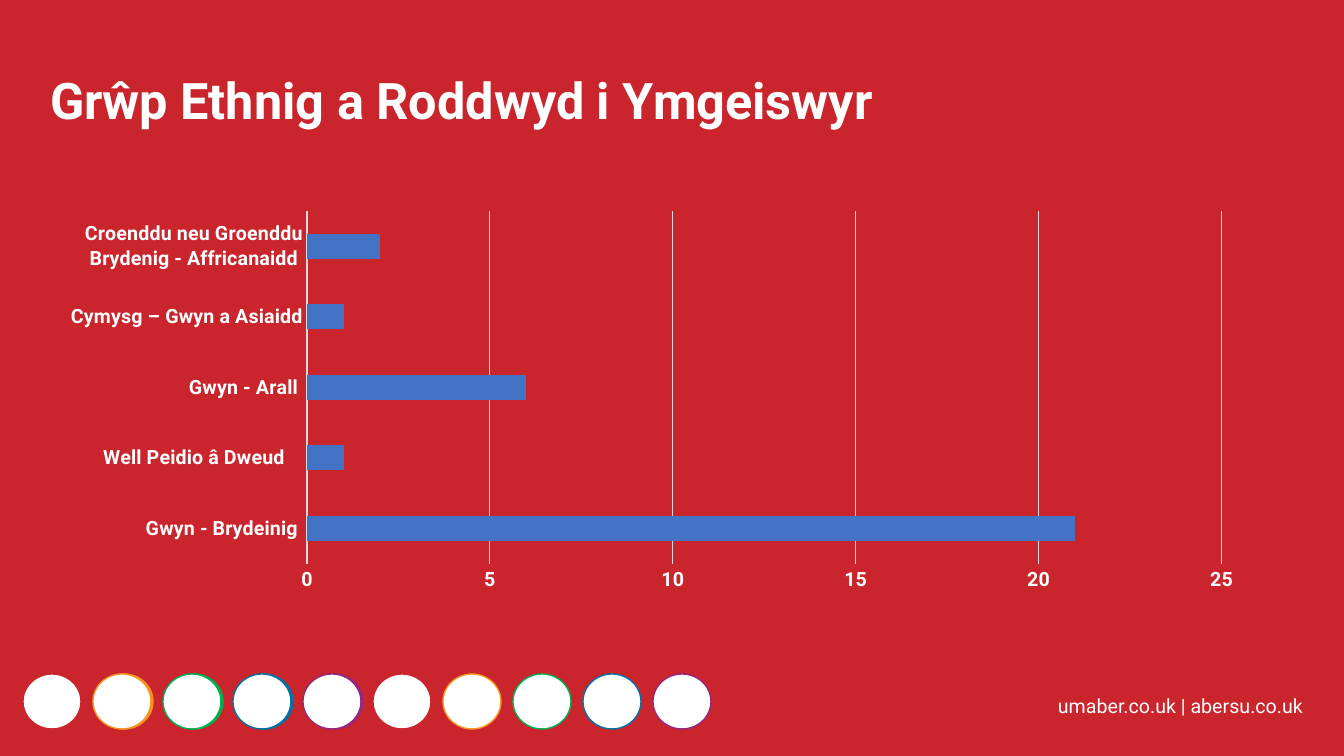
from pptx import Presentation
from pptx.chart.data import CategoryChartData
from pptx.dml.color import RGBColor
from pptx.enum.chart import XL_CHART_TYPE, XL_TICK_MARK
from pptx.enum.shapes import MSO_SHAPE
from pptx.enum.text import MSO_ANCHOR, MSO_AUTO_SIZE, PP_ALIGN
from pptx.util import Pt

BAR_CLUSTERED = XL_CHART_TYPE.BAR_CLUSTERED
NO_TICK = XL_TICK_MARK.NONE
OVAL = MSO_SHAPE.OVAL
TOP = MSO_ANCHOR.TOP
NO_AUTOFIT = MSO_AUTO_SIZE.NONE
LEFT = PP_ALIGN.LEFT

EMU_PER_PX = 914400 / 100.8
FONT = "Roboto"
COLORS = {
    "red": "CA252C",
    "orange": "F7941F",
    "green": "00AF50",
    "blue": "0171A3",
    "purple": "95277D",
    "white": "FFFFFF",
    "grid": "D9D9D9",
    "bar": "4472C4",
}
RING_COLORS = ["red", "orange", "green", "blue", "purple"]
RING_STEP = 70
GROUPS = {
    "Gwyn - Brydeinig ": 21,
    "Well Peidio â Dweud\t": 1,
    "Gwyn - Arall ": 6,
    "Cymysg – Gwyn a Asiaidd": 1,
    "Croenddu neu Groenddu Brydenig - Affricanaidd": 2,
}


def px(*lengths):
    return [round(length * EMU_PER_PX) for length in lengths]


def color(name):
    return RGBColor.from_string(COLORS[name])


def set_font(font, size, bold):
    font.name = FONT
    font.size = Pt(size)
    font.bold = bold
    font.color.rgb = color("white")


def set_line(line, name, width):
    line.color.rgb = color(name)
    line.width = Pt(width)


def write_text(frame, text, size, bold=False):
    frame.word_wrap = True
    frame.auto_size = NO_AUTOFIT
    frame.vertical_anchor = TOP
    para = frame.paragraphs[0]
    para.text = text
    para.alignment = LEFT
    set_font(para.font, size, bold)
    return para


def add_title(page, text):
    title = page.shapes.title
    title.left, title.top, title.width, title.height = px(40, 71, 1151, 88)
    para = write_text(title.text_frame, text, 36, bold=True)
    para.line_spacing = 0.9


def add_circle(page, left, fill, ring):
    circle = page.shapes.add_shape(OVAL, *px(left, 674, 58, 55))
    circle.shadow.inherit = False
    circle.fill.solid()
    circle.fill.fore_color.rgb = color(fill)
    set_line(circle.line, ring, 1)


def add_circle_row(page):
    """Draw ten white rings, the first five over a coloured disc set slightly right."""
    for index, ring in enumerate(RING_COLORS):
        add_circle(page, 25 + index * RING_STEP, ring, ring)
    for index, ring in enumerate(RING_COLORS * 2):
        add_circle(page, 23 + index * RING_STEP, "white", ring)


def add_footer(page, text):
    box = page.shapes.add_textbox(*px(1048, 689, 282, 34))
    write_text(box.text_frame, text, 14)


def add_group_chart(page):
    data = CategoryChartData()
    data.categories = list(GROUPS)
    data.add_series("Series 1", list(GROUPS.values()))
    frame = page.shapes.add_chart(BAR_CLUSTERED, *px(61, 203, 1196, 397), data)
    chart = frame.chart
    chart.has_legend = False
    chart.has_title = False
    set_font(chart.font, 14, True)

    plot = chart.plots[0]
    plot.gap_width = 182
    plot.vary_by_categories = False
    fill = plot.series[0].format.fill
    fill.solid()
    fill.fore_color.rgb = color("bar")

    for axis in (chart.category_axis, chart.value_axis):
        axis.major_tick_mark = NO_TICK
        axis.minor_tick_mark = NO_TICK
        set_font(axis.tick_labels.font, 14, True)
    set_line(chart.category_axis.format.line, "grid", 0.75)

    values = chart.value_axis
    values.minimum_scale = 0
    values.maximum_scale = 25
    values.major_unit = 5
    values.format.line.fill.background()
    values.has_major_gridlines = True
    set_line(values.major_gridlines.format.line, "grid", 0.75)


def main():
    deck = Presentation()
    deck.slide_width, deck.slide_height = px(1344, 756)
    page = deck.slides.add_slide(deck.slide_layouts[5])
    page.background.fill.solid()
    page.background.fill.fore_color.rgb = color("red")
    add_footer(page, "umaber.co.uk | abersu.co.uk")
    add_circle_row(page)
    add_title(page, "Grŵp Ethnig a Roddwyd i Ymgeiswyr")
    add_group_chart(page)
    deck.save("out.pptx")


if __name__ == "__main__":
    main()
